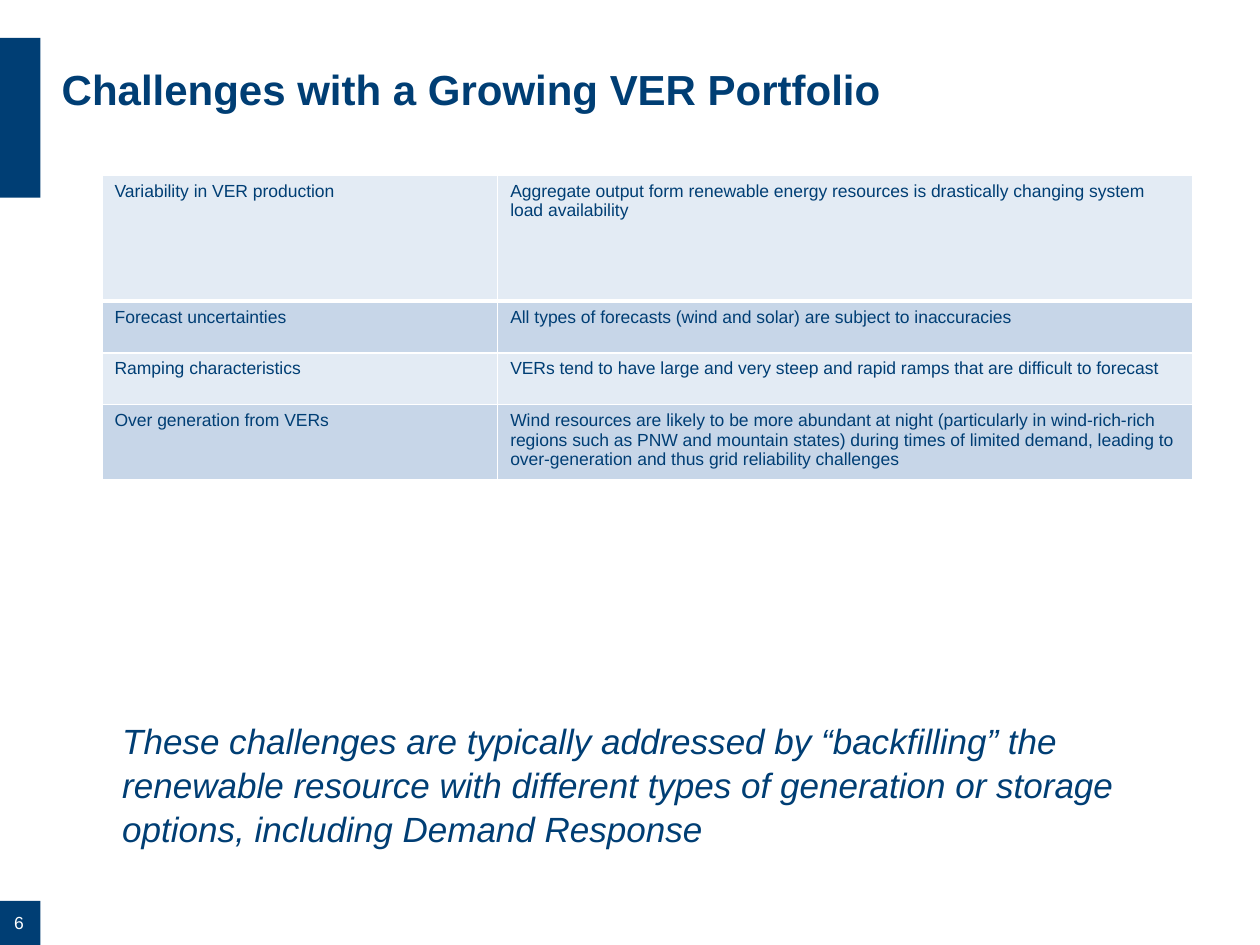
from dataclasses import dataclass

from lxml import etree
from pptx import Presentation
from pptx.dml.color import RGBColor
from pptx.enum import shapes, text
from pptx.oxml import ns
from pptx.util import Inches, Pt


@dataclass(frozen=True)
class Theme:
    font: str = "Arial"
    navy: str = "003E74"
    white: str = "FFFFFF"
    bands: tuple = ("E3EBF4", "C7D6E8")
    title_size: int = 24
    body_size: int = 20
    small_size: int = 10


theme = Theme()


def write(frame, content, size, color, bold=False, italic=False):
    frame.word_wrap = True
    paragraph = frame.paragraphs[0]
    paragraph.text = content
    font = paragraph.font
    font.name, font.size = theme.font, Pt(size)
    font.bold, font.italic = bold, italic
    font.color.rgb = RGBColor.from_string(color)
    return paragraph


def add_text(box, content, size, color, top_margin=0, left_margin=0, **style):
    shape = slide.shapes.add_textbox(*map(Inches, box))
    frame = shape.text_frame
    frame.margin_left, frame.margin_top = Inches(left_margin), Inches(top_margin)
    frame.margin_right = frame.margin_bottom = 0
    return write(frame, content, size, color, **style)


presentation = Presentation()
presentation.slide_width, presentation.slide_height = Inches(10), Inches(7.5)
slide = presentation.slides.add_slide(presentation.slide_layouts[6])

# Navy blocks on the left edge
for top, height in ((0.3, 1.27), (7.15, 0.35)):
    block = slide.shapes.add_shape(
        shapes.MSO_SHAPE.RECTANGLE, 0, Inches(top), Inches(0.32), Inches(height))
    block.shadow.inherit = False
    block.fill.solid()
    block.fill.fore_color.rgb = RGBColor.from_string(theme.navy)
    block.line.fill.background()

# Slide number
number = add_text((0.04, 7.19, 0.22, 0.26), "6", theme.small_size, theme.white,
                  top_margin=0.05)
number.alignment = text.PP_ALIGN.CENTER

# Title
add_text((0.49, 0.46, 8.86, 0.51), "Challenges with a Growing VER Portfolio",
         theme.title_size, theme.navy, top_margin=0.04, bold=True)

# Closing statement
statement = add_text(
    (0.47, 5.12, 8.96, 2.01),
    "These challenges are typically addressed by “backfilling” the renewable "
    "resource with different types of generation or storage options, including "
    "Demand Response",
    theme.body_size, theme.navy, top_margin=0.57, left_margin=0.5, italic=True)
statement.line_spacing = 1.05

# Table of challenges
challenges = (
    ("Variability in VER production",
     "Aggregate output form renewable energy resources is drastically changing "
     "system load availability"),
    ("Forecast uncertainties",
     "All types of forecasts (wind and solar) are subject to inaccuracies"),
    ("Ramping characteristics",
     "VERs tend to have large and very steep and rapid ramps that are difficult "
     "to forecast"),
    ("Over generation from VERs",
     "Wind resources are likely to be more abundant at night (particularly in "
     "wind-rich-rich regions such as PNW and mountain states) during times of "
     "limited demand, leading to over-generation and thus grid reliability "
     "challenges"),
)
column_widths = (3.14, 5.52)
row_heights = (1, 0.41, 0.41, 0.56)
table = slide.shapes.add_table(
    len(challenges), len(column_widths), Inches(0.81), Inches(1.39),
    Inches(sum(column_widths)), Inches(sum(row_heights))).table
for column, width in zip(table.columns, column_widths):
    column.width = Inches(width)
for row, height in zip(table.rows, row_heights):
    row.height = Inches(height)

for row_index, challenge in enumerate(challenges):
    for column_index, content in enumerate(challenge):
        cell = table.cell(row_index, column_index)
        write(cell.text_frame, content, theme.small_size, theme.navy)

        # White rules, with a heavier one below the first row
        properties = cell._tc.get_or_add_tcPr()
        for side in "LRTB":
            heavy = (row_index, side) in ((0, "B"), (1, "T"))
            rule = etree.SubElement(properties, ns.qn(f"a:ln{side}"),
                                    w=str(Pt(3 if heavy else 1)))
            fill = etree.SubElement(rule, ns.qn("a:solidFill"))
            etree.SubElement(fill, ns.qn("a:srgbClr"), val=theme.white)
        cell.fill.solid()
        cell.fill.fore_color.rgb = RGBColor.from_string(theme.bands[row_index % 2])

presentation.save("out.pptx")
